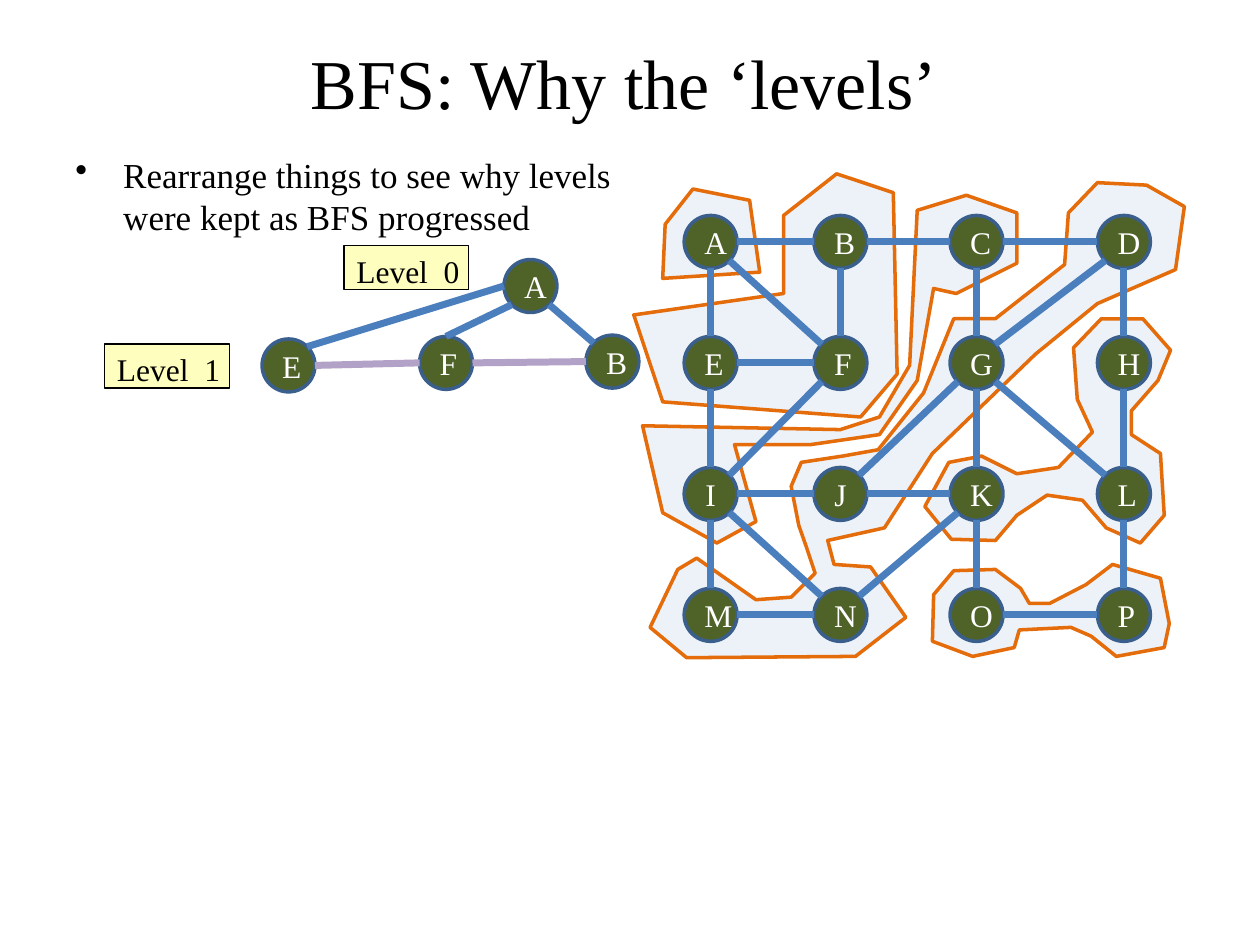
"""Build a slide that shows a graph's breadth-first levels beside its rearranged tree."""
from math import hypot

from lxml import etree
from pptx import Presentation
from pptx.dml.color import RGBColor
from pptx.enum.shapes import MSO_CONNECTOR, MSO_SHAPE
from pptx.enum.text import MSO_ANCHOR, PP_ALIGN
from pptx.oxml.ns import qn
from pptx.util import Inches, Pt

STRAIGHT = MSO_CONNECTOR.STRAIGHT
OVAL, BOX = MSO_SHAPE.OVAL, MSO_SHAPE.RECTANGLE
TOP, MIDDLE = MSO_ANCHOR.TOP, MSO_ANCHOR.MIDDLE
LEFT, CENTER = PP_ALIGN.LEFT, PP_ALIGN.CENTER

BLACK = RGBColor(0x00, 0x00, 0x00)
WHITE = RGBColor(0xFF, 0xFF, 0xFF)
NODE_GREEN = RGBColor(0x4F, 0x62, 0x28)
NODE_RIM = RGBColor(0x3A, 0x5F, 0x8C)
EDGE_BLUE = RGBColor(0x4B, 0x7E, 0xBC)
SIBLING_LILAC = RGBColor(0xB3, 0xA2, 0xC7)
REGION_BLUE = RGBColor(0x4F, 0x81, 0xBD)
REGION_ORANGE = RGBColor(0xE4, 0x6C, 0x0A)
LABEL_YELLOW = RGBColor(0xFE, 0xFE, 0xBE)

FONT = "Times New Roman"
SLIDE_W, SLIDE_H = 10, 7.5
NODE_SIZE = 0.42
LABEL_W, LABEL_H = 0.99, 0.35
HANG = 0.38

TITLE = "BFS: Why the ‘levels’ "
BODY = "Rearrange things to see why levels were kept as BFS progressed"

GRID_ROWS = ["ABCD", "EFGH", "IJKL", "MNOP"]
COLUMN_X = [5.64, 6.67, 7.75, 8.92]
ROW_Y = [1.92, 2.88, 3.92, 4.88]
GRID_EDGES = ("AB AF AE BF BC CD CG DH DG EF EI FI GJ GK GL HL "
              "IM IJ IN JK KN KO LP OP MN").split()

TREE_NODES = {"A": (4.21, 2.27), "B": (4.86, 2.87), "E": (2.29, 2.9), "F": (3.54, 2.88)}
TREE_EDGES = [
    ("A", "W", "E", "NE", EDGE_BLUE),
    ("A", "SW", "F", "N", EDGE_BLUE),
    ("A", "SE", "B", "NW", EDGE_BLUE),
    ("F", "W", "E", "E", SIBLING_LILAC),
    ("F", "E", "B", "W", SIBLING_LILAC),
]
COMPASS = {"N": (0, -1), "NE": (1, -1), "E": (1, 0), "SE": (1, 1),
           "S": (0, 1), "SW": (-1, 1), "W": (-1, 0), "NW": (-1, -1)}

LEVEL_LABELS = [("Level  0", 2.73, 1.95), ("Level  1", 0.83, 2.73)]

LEVEL_REGIONS = [
    [(5.26, 2.21), (6.03, 2.16), (5.95, 1.59), (5.5, 1.5), (5.28, 1.78)],
    [(5.1, 3.38), (6.67, 3.41), (6.98, 3.31), (7.22, 2.9), (7.28, 1.67), (7.67, 1.55),
     (8.07, 1.69), (8.07, 2.09), (7.59, 2.33), (7.41, 2.29), (7.28, 3.02), (6.98, 3.45),
     (6.43, 3.53), (5.83, 3.53), (6, 4.14), (5.69, 4.31), (5.26, 4.07)],
    [(5.26, 3.19), (6.83, 3.31), (7.12, 2.97), (7.09, 1.53), (6.64, 1.38), (6.22, 1.71),
     (6.22, 2.33), (5.03, 2.5)],
    [(5.38, 4.52), (5.16, 4.98), (5.45, 5.22), (6.79, 5.21), (7.19, 4.9), (6.91, 4.5),
     (6.62, 4.48), (6.57, 4.29), (7.02, 4.19), (7.4, 3.6), (8.22, 2.81), (8.71, 2.41),
     (9.33, 2.14), (9.4, 1.64), (9.1, 1.47), (8.71, 1.45), (8.48, 1.69), (8.45, 2.1),
     (7.9, 2.53), (7.57, 2.53), (7.33, 3.12), (6.97, 3.57), (6.69, 3.62), (6.36, 3.67),
     (6.28, 3.86), (6.34, 4.17), (6.4, 4.34), (6.47, 4.55), (6.28, 4.74), (6, 4.76),
     (5.53, 4.43)],
    [(7.53, 3.67), (7.34, 4.02), (7.55, 4.28), (7.9, 4.29), (8.07, 4.09), (8.31, 3.93),
     (8.59, 3.97), (8.78, 4.19), (9.05, 4.31), (9.24, 4.09), (9.21, 3.6), (8.98, 3.45),
     (8.98, 3.26), (9.19, 3.02), (9.29, 2.78), (9.07, 2.53), (8.74, 2.53), (8.52, 2.76),
     (8.55, 3.17), (8.67, 3.43), (8.4, 3.71), (8.07, 3.76), (7.79, 3.62)],
    [(8.1, 4.67), (7.9, 4.52), (7.57, 4.53), (7.41, 4.72), (7.4, 5.09), (7.72, 5.21),
     (8.05, 5.14), (8.09, 5), (8.5, 4.98), (8.66, 5.05), (8.86, 5.21), (9.24, 5.14),
     (9.28, 4.95), (9.21, 4.59), (8.83, 4.48), (8.62, 4.64), (8.33, 4.79), (8.17, 4.79)],
]


def write(shape, text, *, size=18, color=BLACK, align=LEFT, anchor=TOP, wrap=True):
    frame = shape.text_frame
    frame.word_wrap = wrap
    frame.vertical_anchor = anchor
    paragraph = frame.paragraphs[0]
    paragraph.alignment = align
    run = paragraph.add_run()
    run.text = text
    run.font.name = FONT
    run.font.size = Pt(size)
    run.font.color.rgb = color
    return paragraph


def paint(shape, fill, line, width):
    shape.shadow.inherit = False
    shape.fill.solid()
    shape.fill.fore_color.rgb = fill
    shape.line.color.rgb = line
    shape.line.width = Pt(width)


def add_region(shapes, outline):
    points = [(Inches(x), Inches(y)) for x, y in outline]
    builder = shapes.build_freeform(*points[0], scale=1.0)
    builder.add_line_segments(points[1:], close=True)
    region = builder.convert_to_shape()
    paint(region, REGION_BLUE, REGION_ORANGE, 2)
    tint = region.fill._xPr.find(qn("a:solidFill"))[0]
    etree.SubElement(tint, qn("a:alpha"), val="10000")


def add_node(shapes, letter, center):
    left, top = (Inches(c - NODE_SIZE / 2) for c in center)
    node = shapes.add_shape(OVAL, left, top, Inches(NODE_SIZE), Inches(NODE_SIZE))
    paint(node, NODE_GREEN, NODE_RIM, 2)
    write(node, letter, color=WHITE, align=CENTER, anchor=MIDDLE)


def rim_point(center, direction):
    reach = NODE_SIZE / 2 / hypot(*direction)
    return [Inches(c + d * reach) for c, d in zip(center, direction)]


def add_edge(shapes, start, leave, end, arrive, color):
    edge = shapes.add_connector(STRAIGHT, *rim_point(start, leave), *rim_point(end, arrive))
    edge.line.color.rgb = color
    edge.line.width = Pt(4)
    etree.SubElement(edge._element.spPr, qn("a:effectLst"))


def add_text_area(shapes, *box):
    return shapes.add_textbox(*(Inches(length) for length in box))


def main():
    deck = Presentation()
    deck.slide_width, deck.slide_height = Inches(SLIDE_W), Inches(SLIDE_H)
    shapes = deck.slides.add_slide(deck.slide_layouts[6]).shapes

    for outline in LEVEL_REGIONS:
        add_region(shapes, outline)

    title = add_text_area(shapes, 0.5, 0.3, 9, 0.7)
    write(title, TITLE, size=40, align=CENTER, anchor=MIDDLE)
    body = add_text_area(shapes, 0.5, 1.17, 4.5, 0.75)
    bullet = write(body, BODY, size=20)
    bullet.space_before = Pt(4)
    properties = bullet._p.get_or_add_pPr()
    properties.set("marL", str(Inches(HANG)))
    properties.set("indent", str(-Inches(HANG)))
    etree.SubElement(properties, qn("a:buChar"), char="•")

    cells = {letter: (column, row)
             for row, letters in enumerate(GRID_ROWS)
             for column, letter in enumerate(letters)}
    centers = {letter: (COLUMN_X[column], ROW_Y[row])
               for letter, (column, row) in cells.items()}
    for letter, center in centers.items():
        add_node(shapes, letter, center)
    for start, end in GRID_EDGES:
        leave = [b - a for a, b in zip(cells[start], cells[end])]
        arrive = [-step for step in leave]
        add_edge(shapes, centers[start], leave, centers[end], arrive, EDGE_BLUE)

    for letter, center in TREE_NODES.items():
        add_node(shapes, letter, center)
    for text, left, top in LEVEL_LABELS:
        label = shapes.add_shape(BOX, Inches(left), Inches(top), Inches(LABEL_W), Inches(LABEL_H))
        paint(label, LABEL_YELLOW, BLACK, 0.75)
        write(label, text, wrap=False)
    for start, leave, end, arrive, color in TREE_EDGES:
        add_edge(shapes, TREE_NODES[start], COMPASS[leave],
                 TREE_NODES[end], COMPASS[arrive], color)

    deck.save("out.pptx")


if __name__ == "__main__":
    main()
